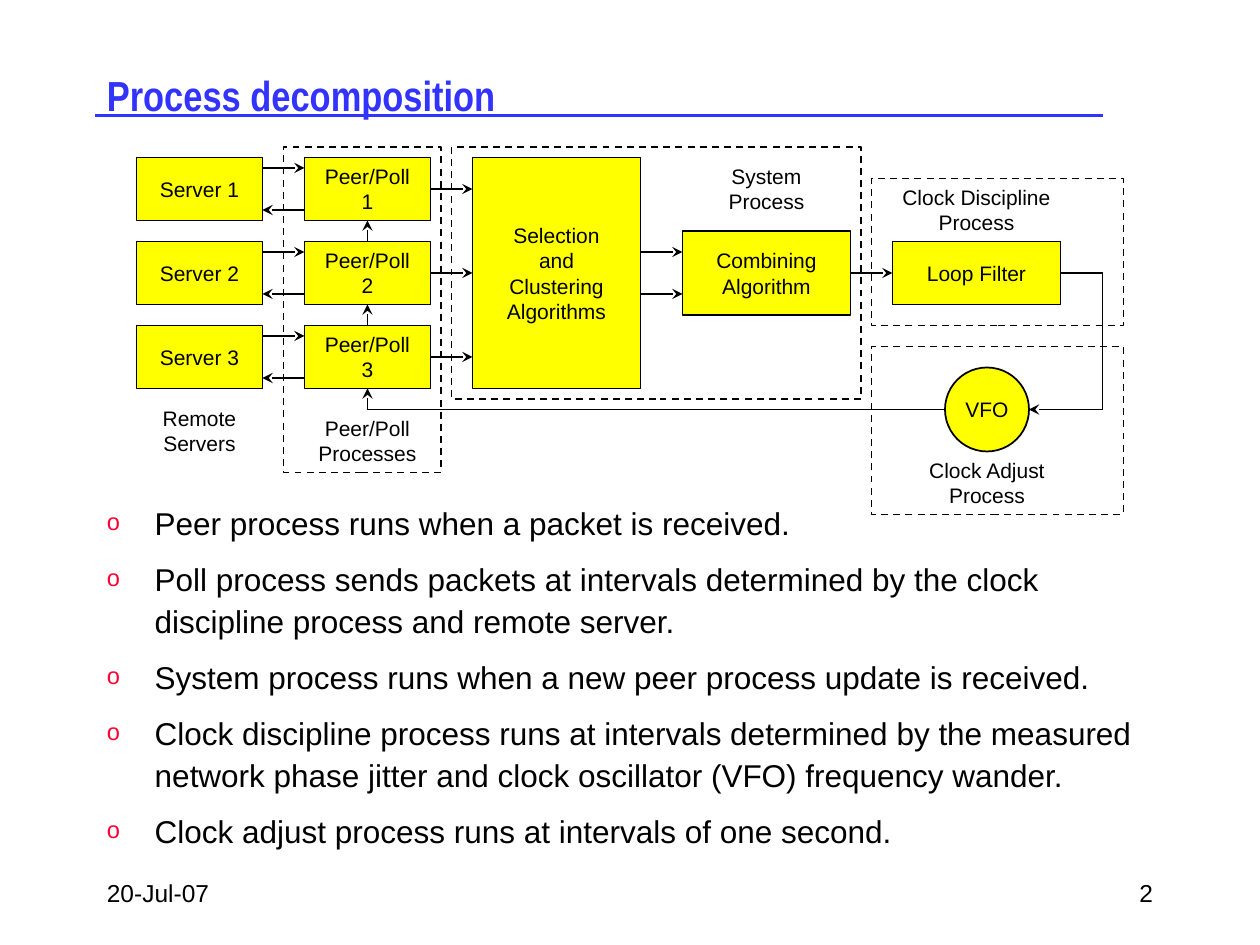
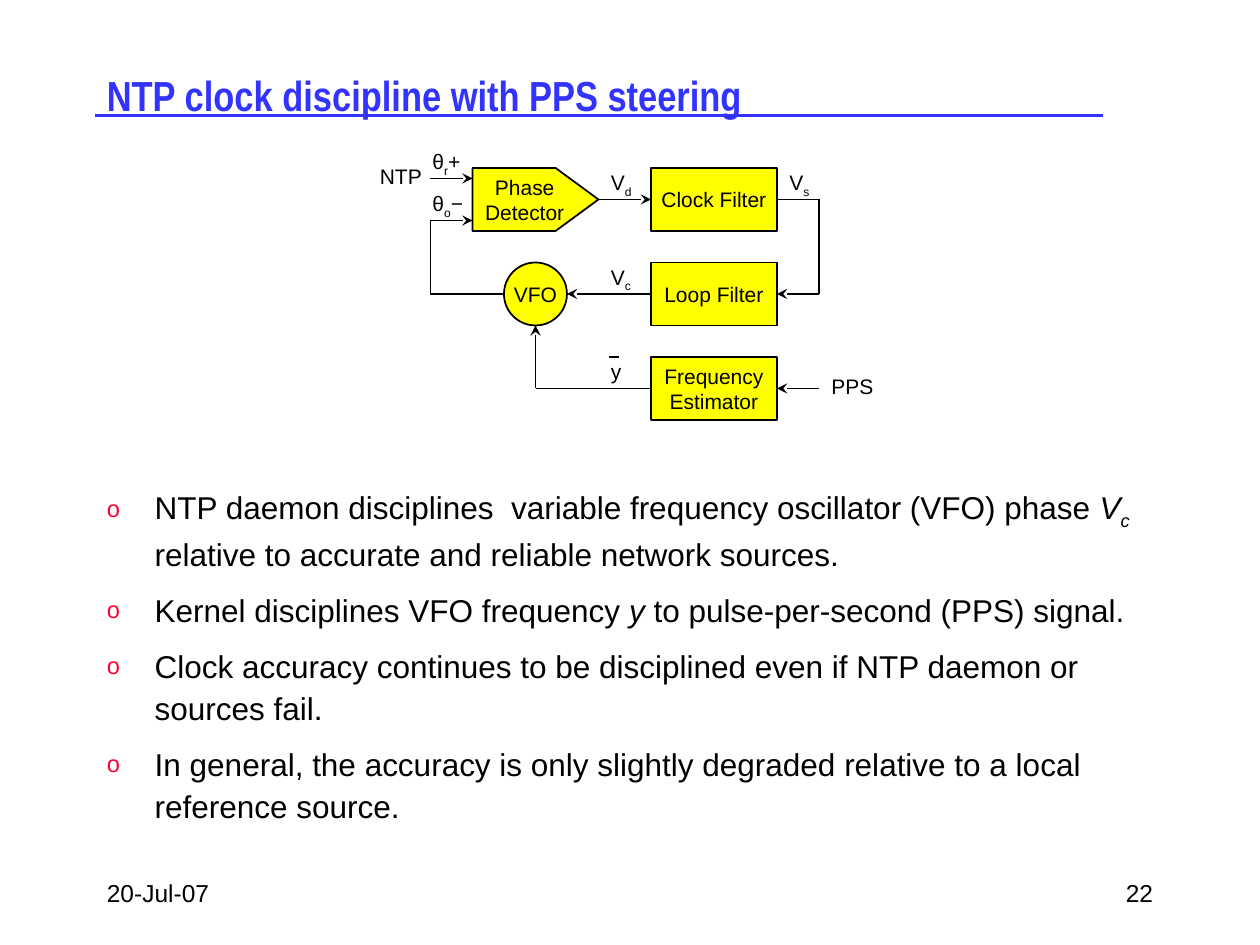
from dataclasses import dataclass
from itertools import pairwise
from typing import Any, NamedTuple

from lxml.etree import SubElement
from pptx import Presentation
from pptx.dml.color import RGBColor
from pptx.enum.dml import MSO_LINE
from pptx.enum.shapes import MSO_CONNECTOR, MSO_SHAPE
from pptx.enum.text import MSO_ANCHOR, PP_ALIGN
from pptx.oxml.ns import qn
from pptx.util import Inches, Pt

COLORS = {
    "title": "3333FF",
    "ink": "000000",
    "block": "FFFF00",
    "bullet": "FF0033",
}
FONT, TITLE_FONT = "Arial", "Arial Narrow"
COLS, ROWS = 120, 90
UNIT = Inches(10) // COLS
TOP, LEFT, BOTTOM, RIGHT = range(4)
BLOCK = (12, 6)


def rgb(name):
    return RGBColor.from_string(COLORS[name])


class Port(NamedTuple):
    """Middle of one side of a rectangle."""
    shape: Any
    side: int


def write(tf, paragraphs, size, align=PP_ALIGN.CENTER, anchor=MSO_ANCHOR.MIDDLE,
          wrap=False, font=FONT, color="ink", bold=False):
    """Each paragraph is a string or a list of (text, style) with style "", "i", "sub"."""
    tf.word_wrap = wrap
    tf.vertical_anchor = anchor
    for n, content in enumerate(paragraphs):
        p = tf.paragraphs[0] if n == 0 else tf.add_paragraph()
        p.alignment = align
        for text, style in [(content, "")] if isinstance(content, str) else content:
            r = p.add_run()
            r.text = text
            r.font.name, r.font.size, r.font.bold = font, Pt(size), bold
            r.font.color.rgb = rgb(color)
            r.font.italic = "i" in style
            if "sub" in style:
                r.font._element.set("baseline", "-25000")


@dataclass
class Region:
    """A box on the slide grid; its parts are placed in columns and rows from its corner."""
    slide: Any
    col: float
    row: float
    cols: float
    rows: float

    def place(self, col, row, cols, rows):
        units = (self.col + col, self.row + row, cols, rows)
        return [round(u * UNIT) for u in units]

    def text(self, col, row, cols, rows, paragraphs, size, **style):
        sp = self.slide.shapes.add_textbox(*self.place(col, row, cols, rows))
        write(sp.text_frame, paragraphs, size, **style)
        return sp

    def fill_with(self, paragraphs, size, **style):
        return self.text(0, 0, self.cols, self.rows, paragraphs, size,
                         wrap=True, align=style.pop("align", PP_ALIGN.LEFT), **style)

    def caption(self, col, row, cols, text):
        self.text(col, row, cols, 6, text.split("\n"), 12)

    def signal(self, col, row, cols, *runs):
        self.text(col, row, cols, 3.6, [list(runs)], 12, wrap=True,
                  align=PP_ALIGN.LEFT, anchor=MSO_ANCHOR.TOP)

    def outline(self, kind, col, row, cols, rows):
        sp = self.slide.shapes.add_shape(kind, *self.place(col, row, cols, rows))
        sp.shadow.inherit = False
        sp.line.color.rgb = rgb("ink")
        sp.line.width = Pt(1)
        return sp

    def block(self, col, row, text, size=BLOCK, kind=MSO_SHAPE.RECTANGLE):
        sp = self.outline(kind, col, row, *size)
        sp.fill.solid()
        sp.fill.fore_color.rgb = rgb("block")
        write(sp.text_frame, text.split("\n"), 12)
        return sp

    def frame(self, col, row, cols, rows):
        sp = self.outline(MSO_SHAPE.RECTANGLE, col, row, cols, rows)
        sp.fill.background()
        sp.line.dash_style = MSO_LINE.DASH

    def wire(self, *points, arrow=True, color="ink", width=1):
        """Straight segments through grid points or ports, with the arrowhead last."""
        for start, end in pairwise(points):
            ends = []
            for point in (start, end):
                spot = (0, 0) if isinstance(point, Port) else point
                ends += self.place(*spot, 0, 0)[:2]
            c = self.slide.shapes.add_connector(MSO_CONNECTOR.STRAIGHT, *ends)
            if isinstance(start, Port):
                c.begin_connect(*start)
            if isinstance(end, Port):
                c.end_connect(*end)
            c.line.color.rgb = rgb(color)
            c.line.width = Pt(width)
            sppr = c._element.spPr
            if arrow and end is points[-1]:
                SubElement(sppr.find(qn("a:ln")), qn("a:tailEnd"), type="stealth")
            SubElement(sppr, qn("a:effectLst"))


def page_furniture(slide, title, number):
    # Title and its rule
    Region(slide, 9, 11, 96, 0).wire((0, 0), (96, 0), arrow=False, color="title", width=2)
    Region(slide, 9, 5, 102, 8).fill_with(
        [title], 24, font=TITLE_FONT, color="title", bold=True)
    # Date and page number
    Region(slide, 9, 82, 25, 6).fill_with(["20-Jul-07"], 14)
    Region(slide, 86, 82, 25, 6).fill_with([str(number)], 14, align=PP_ALIGN.RIGHT)


def bullet_list(region, items):
    sp = region.fill_with(items, 18, anchor=MSO_ANCHOR.TOP)
    for p in sp.text_frame.paragraphs:
        p.line_spacing, p.space_before = Pt(24), Pt(8)
        ppr = p._p.get_or_add_pPr()
        ppr.set("marL", str(Inches(0.38)))
        ppr.set("indent", str(-Inches(0.38)))
        SubElement(SubElement(ppr, qn("a:buClr")), qn("a:srgbClr"), val=COLORS["bullet"])
        SubElement(ppr, qn("a:buSzPct"), val="75000")
        SubElement(ppr, qn("a:buFont"), typeface=FONT)
        SubElement(ppr, qn("a:buChar"), char="o")


def process_diagram(region):
    # Process boundaries and their names
    for box in ((14, 0, 15, 31), (30, 0, 39, 24), (70, 3, 24, 14), (70, 19, 24, 16)):
        region.frame(*box)
    for caption in ((0, 24, 12, "Remote\nServers"), (16, 25, 12, "Peer/Poll\nProcesses"),
                    (51, 1, 18, "System\nProcess"), (70, 3, 20, "Clock Discipline\nProcess"),
                    (71, 29, 20, "Clock Adjust\nProcess")):
        region.caption(*caption)

    # System, discipline and adjust blocks
    selection = region.block(32, 1, "Selection\nand\nClustering\nAlgorithms", (16, 22))
    combining = region.block(52, 8, "Combining\nAlgorithm", (16, 8))
    loop = region.block(72, 9, "Loop Filter", (16, 6))
    region.block(77, 21, "VFO", (8, 8), MSO_SHAPE.OVAL)

    # Servers with their peer/poll processes
    peers = []
    for n in range(3):
        row = 1 + 8 * n
        region.block(0, row, f"Server {n + 1}")
        peer = region.block(16, row, f"Peer/Poll\n{n + 1}")
        region.wire((12, row + 1), (16, row + 1))
        region.wire((16, row + 5), (12, row + 5))
        target = Port(selection, LEFT) if n == 1 else (32, row + 3)
        region.wire(Port(peer, RIGHT), target)
        if peers:
            region.wire(Port(peer, TOP), Port(peers[-1], BOTTOM))
        peers.append(peer)

    # Forward signals and the feedback loop
    for row in (10, 14):
        region.wire((48, row), (52, row))
    region.wire(Port(combining, RIGHT), Port(loop, LEFT))
    region.wire(Port(loop, RIGHT), (92, 12), (92, 25), (85, 25))
    region.wire((77, 25), (22, 25), Port(peers[-1], BOTTOM))


def steering_diagram(region):
    # Signal names
    region.signal(0, 2, 8, ("NTP", ""))
    region.signal(5, 0.6, 7, ("θ", ""), ("r", "sub"), ("+", ""))
    region.signal(5, 4.6, 6, ("θ", ""), ("o", "sub"), ("−", ""))
    region.signal(39, 2.6, 5, ("V", ""), ("s", "sub"))
    region.signal(22, 2.6, 5, ("V", ""), ("d", "sub"))
    region.signal(22, 11.6, 5, ("V", ""), ("c", "sub"))
    region.signal(22, 20.6, 5, ("y", ""))
    region.signal(43, 22, 7, ("PPS", ""))
    region.wire((23, 21), (24, 21), arrow=False)

    # Blocks
    detector = region.block(10, 3, "Phase\nDetector", kind=MSO_SHAPE.PENTAGON)
    detector.adjustments[0] = 0.68
    names = ("Clock Filter", "Loop Filter", "Frequency\nEstimator")
    clock, loop, estimator = [region.block(27, 3 + 9 * n, name)
                              for n, name in enumerate(names)]
    region.block(13, 12, "VFO", (6, 6), MSO_SHAPE.OVAL)

    # Signal flow
    region.wire((6, 4), (10, 4))
    region.wire((22, 6), Port(clock, LEFT))
    region.wire(Port(clock, RIGHT), (43, 6), (43, 15), Port(loop, RIGHT))
    region.wire(Port(loop, LEFT), (19, 15))
    region.wire((13, 15), (6, 15), (6, 8), (10, 8))
    region.wire((43, 24), Port(estimator, RIGHT))
    region.wire(Port(estimator, LEFT), (16, 24), (16, 18))


def process_slide(slide):
    page_furniture(slide, "Process decomposition", 2)
    bullet_list(Region(slide, 9, 47, 102, 34), [
        "Peer process runs when a packet is received.",
        "Poll process sends packets at intervals determined by the clock discipline "
        "process and remote server.",
        "System process runs when a new peer process update is received.",
        "Clock discipline process runs at intervals determined by the measured network "
        "phase jitter and clock oscillator (VFO) frequency wander.",
        "Clock adjust process runs at intervals of one second.",
    ])
    process_diagram(Region(slide, 13, 14, 94, 35))


def steering_slide(slide):
    page_furniture(slide, "NTP clock discipline with PPS steering", 22)
    bullet_list(Region(slide, 9, 46, 102, 36), [
        [("NTP daemon disciplines  variable frequency oscillator (VFO) phase ", ""),
         ("V", "i"), ("c ", "i sub"),
         ("relative to accurate and reliable network sources.", "")],
        [("Kernel disciplines VFO frequency ", ""), ("y", "i"),
         (" to pulse-per-second (PPS) signal.", "")],
        "Clock accuracy continues to be disciplined even if NTP daemon or sources fail.",
        "In general, the accuracy is only slightly degraded relative to a local "
        "reference source.",
    ])
    steering_diagram(Region(slide, 35, 13, 50, 28))


def main():
    prs = Presentation()
    prs.slide_width, prs.slide_height = COLS * UNIT, ROWS * UNIT
    blank = prs.slide_layouts[6]
    for build in (process_slide, steering_slide):
        build(prs.slides.add_slide(blank))
    prs.save("out.pptx")


if __name__ == "__main__":
    main()
